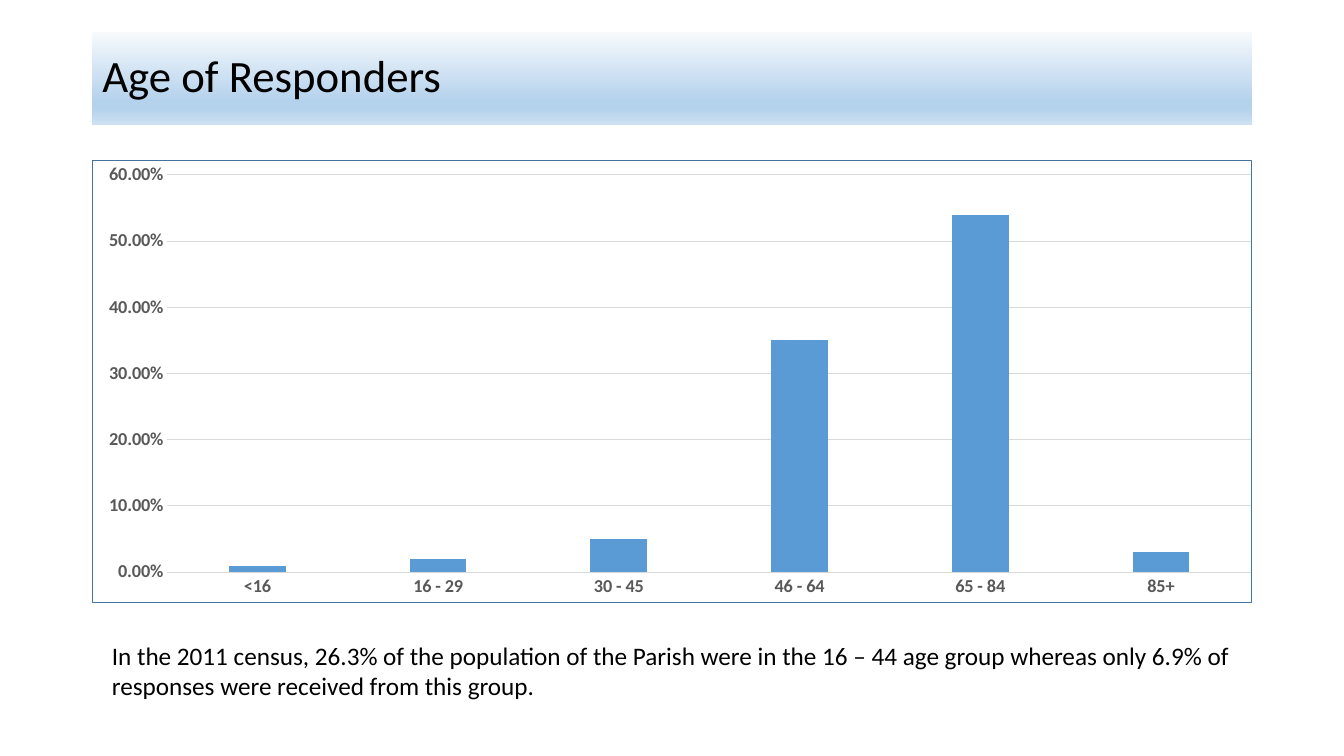
"""Build the slide showing the age groups of survey responders."""
from lxml import etree
from pptx import Presentation
from pptx.chart.data import CategoryChartData
from pptx.dml.color import RGBColor
from pptx.enum.chart import XL_CHART_TYPE as ChartType, XL_TICK_MARK as Tick
from pptx.enum.shapes import MSO_SHAPE as Shape
from pptx.enum.text import MSO_ANCHOR as Anchor, PP_ALIGN as Align
from pptx.oxml import parse_xml
from pptx.oxml.ns import nsdecls, qn
from pptx.util import Cm, Pt


def color(value):
    return RGBColor.from_string(value)


def write(shape, text, size):
    frame = shape.text_frame
    frame.word_wrap = True
    frame.text = text
    paragraph = frame.paragraphs[0]
    paragraph.alignment = Align.LEFT
    font = paragraph.runs[0].font
    font.name, font.size = "Calibri", Pt(size)
    font.color.rgb = color("000000")
    return frame


deck = Presentation()
deck.slide_width, deck.slide_height = Cm(33.87), Cm(19.05)
slide = deck.slides.add_slide(deck.slide_layouts[6])
left, width = Cm(2.33), Cm(29.22)

title = slide.shapes.add_shape(Shape.RECTANGLE, left, Cm(0.8), width, Cm(2.35))
title.shadow.inherit = False
title.line.fill.background()
title.fill.gradient()
title.fill.gradient_angle = 270
stops = title._element.spPr.find(qn("a:gradFill")).find(qn("a:gsLst"))
for stop in list(stops):
    stops.remove(stop)
for percent, shade in [(0, "F7FAFD"), (74, "B5D2EC"), (83, "B5D2EC"), (100, "CEE1F2")]:
    stop = etree.SubElement(stops, qn("a:gs"), pos=str(percent * 1000))
    etree.SubElement(stop, qn("a:srgbClr"), val=shade)
heading = write(title, "Age of Responders", 32)
heading.vertical_anchor = Anchor.MIDDLE
heading.paragraphs[0].line_spacing = 0.9

census = slide.shapes.add_textbox(Cm(2.57), Cm(16), Cm(29.51), Cm(1.8))
write(census, "In the 2011 census, 26.3% of the population of the Parish were in the "
      "16 – 44 age group whereas only 6.9% of responses were received from this group.", 18)

shares = {"<16": 0.01, "16 - 29": 0.02, "30 - 45": 0.05,
          "46 - 64": 0.35, "65 - 84": 0.54, "85+": 0.03}
data = CategoryChartData(number_format="0.00%")
data.categories = list(shares)
data.add_series("Series 1", shares.values())
chart = slide.shapes.add_chart(ChartType.COLUMN_CLUSTERED, left, Cm(4.04), width, Cm(11.15), data).chart
chart.has_legend = False
chart.has_title = False
chart.font.name, chart.font.size = "Calibri", Pt(10)

columns = chart.plots[0]
columns.gap_width, columns.overlap = 219, -27
columns.vary_by_categories = False
bars = columns.series[0].format.fill
bars.solid()
bars.fore_color.rgb = color("5B9BD5")

ages, percentages = chart.category_axis, chart.value_axis
for axis in (ages, percentages):
    axis.major_tick_mark = axis.minor_tick_mark = Tick.NONE
    font = axis.tick_labels.font
    font.name, font.size, font.bold = "Calibri", Pt(13), True
    font.color.rgb = color("595959")
percentages.minimum_scale, percentages.maximum_scale, percentages.major_unit = 0, 0.6, 0.1
percentages.tick_labels.number_format = "0.00%"
percentages.tick_labels.number_format_is_linked = False
percentages.has_major_gridlines = True
percentages.format.line.fill.background()
for line in (ages.format.line, percentages.major_gridlines.format.line):
    line.color.rgb = color("D9D9D9")
    line.width = Pt(0.75)

space = chart._chartSpace
space.find(qn("c:chart")).addnext(parse_xml(
    f'<c:spPr {nsdecls("c", "a")}><a:noFill/><a:ln w="{Pt(0.75)}"><a:solidFill>'
    '<a:srgbClr val="43739E"/></a:solidFill></a:ln></c:spPr>'))
plot_area = space.find(qn("c:chart")).find(qn("c:plotArea"))
for layout in plot_area.findall(qn("c:layout")):
    plot_area.remove(layout)
layout = etree.Element(qn("c:layout"))
manual = etree.SubElement(layout, qn("c:manualLayout"))
for tag, value in [("layoutTarget", "inner"), ("xMode", "edge"), ("yMode", "edge"),
                   ("x", "0.064"), ("y", "0.032"), ("w", "0.936"), ("h", "0.9")]:
    etree.SubElement(manual, qn(f"c:{tag}"), val=value)
plot_area.insert(0, layout)

deck.save("out.pptx")
